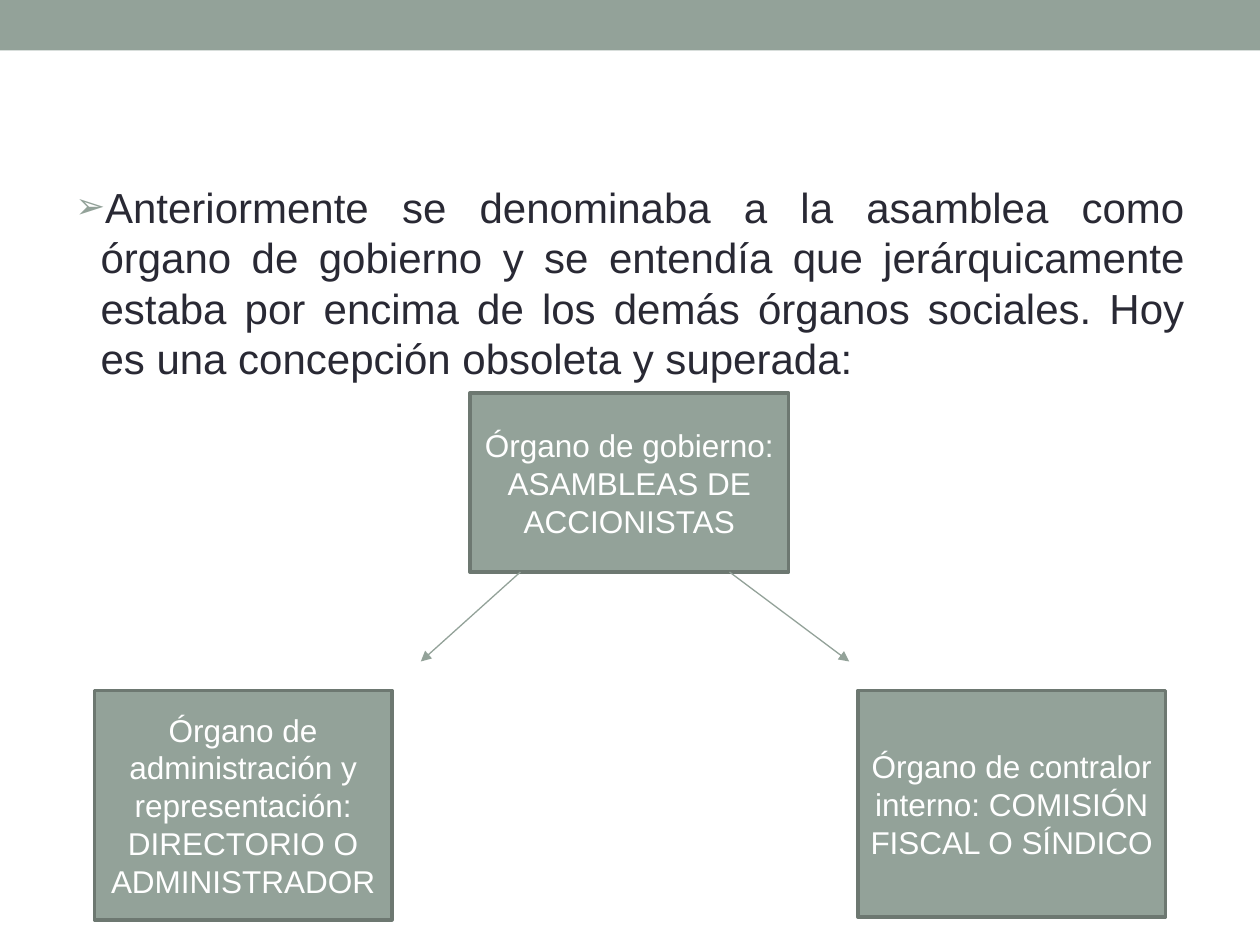
from lxml.etree import SubElement
from pptx import Presentation
from pptx.dml.color import RGBColor
from pptx.enum.shapes import MSO_CONNECTOR, MSO_SHAPE
from pptx.enum.text import MSO_ANCHOR, PP_ALIGN
from pptx.oxml.ns import qn
from pptx.util import Inches, Pt

THEME = {
    "font": "Arial",
    "sage": "93A299",
    "border": "6D7871",
    "ink": "292934",
    "white": "FFFFFF",
    "body_size": 24,
    "box_size": 18,
    "border_width": 2.08,
    "arrow_width": 0.75,
}

INTRO = (
    "Anteriormente se denominaba a la asamblea como órgano de gobierno y se entendía "
    "que jerárquicamente estaba por encima de los demás órganos sociales. "
    "Hoy es una concepción obsoleta y superada:"
)
INTRO_AREA = (0.5, 1.39, 9, 5.67)
BANNER_AREA = (0, 0, 10, 0.4)
ORGANS = [
    ("Órgano de gobierno: ASAMBLEAS DE ACCIONISTAS", (3.73, 3.12, 2.53, 1.42)),
    ("Órgano de administración y representación: DIRECTORIO O ADMINISTRADOR",
     (0.75, 5.48, 2.36, 1.82)),
    ("Órgano de contralor interno: COMISIÓN FISCAL O SÍNDICO", (6.81, 5.48, 2.44, 1.8)),
]
ARROW_TOP, ARROW_BOTTOM = 4.54, 5.25
ARROWS = [(4.13, 3.34), (5.79, 6.74)]


def color(name):
    return RGBColor.from_string(THEME[name])


def inches(values):
    return [Inches(value) for value in values]


def write(shape, text, *, size, ink, align, anchor):
    frame = shape.text_frame
    frame.word_wrap = True
    frame.vertical_anchor = anchor
    para = frame.paragraphs[0]
    para.alignment = align
    span = para.add_run()
    span.text = text
    span.font.name = THEME["font"]
    span.font.size = Pt(THEME[size])
    span.font.color.rgb = color(ink)
    return para


def add_bullet(para, symbol, indent):
    props = para._p.get_or_add_pPr()
    props.set("marL", str(Inches(indent)))
    props.set("indent", str(-Inches(indent)))
    space = SubElement(props, qn("a:spcBef"))
    SubElement(space, qn("a:spcPct"), val="20000")
    tint = SubElement(props, qn("a:buClr"))
    SubElement(tint, qn("a:srgbClr"), val=THEME["sage"])
    SubElement(props, qn("a:buSzPct"), val="85000")
    SubElement(props, qn("a:buFont"), typeface=THEME["font"])
    SubElement(props, qn("a:buChar"), char=symbol)


def add_rectangle(page, area, bordered=True):
    box = page.shapes.add_shape(MSO_SHAPE.RECTANGLE, *inches(area))
    box.shadow.inherit = False
    box.fill.solid()
    box.fill.fore_color.rgb = color("sage")
    if bordered:
        box.line.color.rgb = color("border")
        box.line.width = Pt(THEME["border_width"])
    else:
        box.line.fill.background()
    return box


def add_arrow(page, start, end):
    arrow = page.shapes.add_connector(MSO_CONNECTOR.STRAIGHT, *inches(start + end))
    arrow.line.color.rgb = color("sage")
    arrow.line.width = Pt(THEME["arrow_width"])
    SubElement(arrow.line._get_or_add_ln(), qn("a:tailEnd"), type="triangle")
    SubElement(arrow._element.spPr, qn("a:effectLst"))


def main():
    deck = Presentation()
    deck.slide_width, deck.slide_height = inches((10, 7.5))
    page = deck.slides.add_slide(deck.slide_layouts[6])

    add_rectangle(page, BANNER_AREA, bordered=False)
    intro = page.shapes.add_textbox(*inches(INTRO_AREA))
    para = write(intro, INTRO, size="body_size", ink="ink",
                 align=PP_ALIGN.JUSTIFY, anchor=MSO_ANCHOR.TOP)
    add_bullet(para, "➢", 0.2)

    for label, area in ORGANS:
        write(add_rectangle(page, area), label, size="box_size", ink="white",
              align=PP_ALIGN.CENTER, anchor=MSO_ANCHOR.MIDDLE)
    for start, end in ARROWS:
        add_arrow(page, (start, ARROW_TOP), (end, ARROW_BOTTOM))

    deck.save("out.pptx")


if __name__ == "__main__":
    main()
